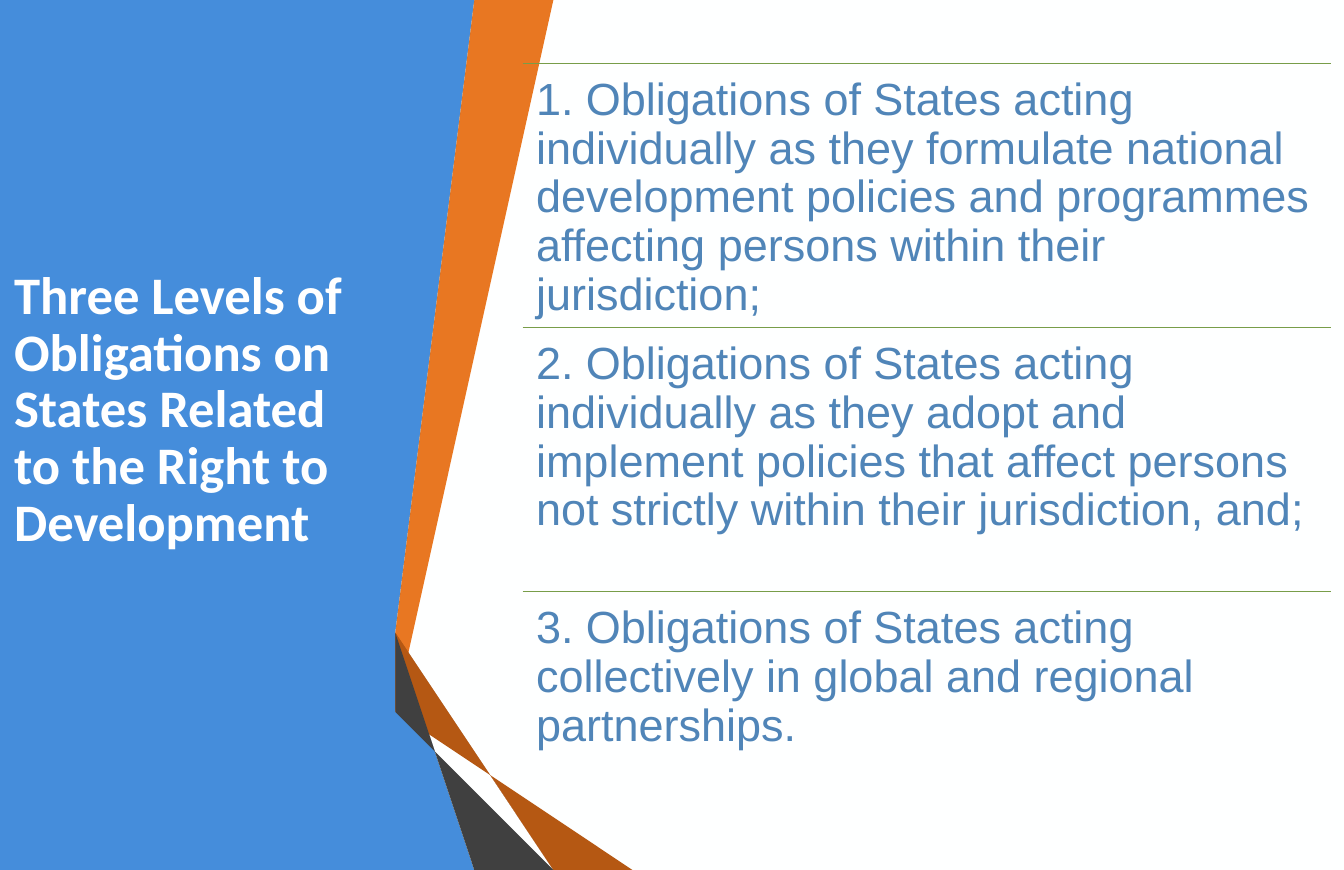
from dataclasses import dataclass

import pptx
import pptx.dml.color
import pptx.enum.shapes
import pptx.enum.text
import pptx.oxml.ns
import pptx.util
from lxml import etree
from pptx.util import Inches


@dataclass(frozen=True)
class Theme:
    background: str = "FEFFFF"
    panel: str = "458DDB"
    orange: str = "E87722"
    orange_fold: str = "B55813"
    orange_edge: str = "783B0D"
    grey: str = "595959"
    grey_fold: str = "404040"
    grey_edge: str = "262626"
    title: str = "FFFFFF"
    body: str = "5085B8"
    rule: str = "789D49"
    title_font: str = "Calibri"
    body_font: str = "Arial"
    title_size: int = 48
    body_size: int = 41
    rule_width: int = 1


THEME = Theme()

PANEL = [(4.5, 0), (5.72, 0), (4.54, 8.43), (6.14, 11), (0, 11), (0, 0)]
RIBBONS = [
    (THEME.orange, [(5.05, 8.48), (5.4, 8.55), (6.61, 0), (6.26, 0)]),
    (THEME.grey, [(6.18, 0), (5.83, 0), (4.62, 8.4), (4.97, 8.46)]),
    (THEME.grey_edge, [(4.62, 8.4), (6.26, 11), (6.34, 11)]),
    (THEME.orange_edge, [(5.05, 8.49), (7.06, 11), (7.14, 11)]),
    (THEME.orange_fold, [(5.05, 8.49), (7.14, 11), (8.02, 11), (5.4, 8.55), (5.05, 8.48)]),
    (THEME.grey_fold, [(6.99, 11), (5.03, 8.56), (4.96, 8.47), (4.97, 8.46), (4.62, 8.4), (6.34, 11)]),
]

TITLE = "Three Levels of Obligations on States Related to the Right to Development"
OBLIGATIONS = [
    "1. Obligations of States acting individually as they formulate national "
    "development policies and programmes affecting persons within their jurisdiction;",
    "2. Obligations of States acting individually as they adopt and implement "
    "policies that affect persons not strictly within their jurisdiction, and;",
    "3. Obligations of States acting collectively in global and regional partnerships.",
]
LIST_LEFT, LIST_TOP, LIST_WIDTH, ROW_HEIGHT = 6.61, 0.8, 10.22, 3.34


def rgb(value):
    return pptx.dml.color.RGBColor.from_string(value)


def add_polygon(s, points, color):
    builder = s.shapes.build_freeform(*points[0], scale=Inches(1))
    builder.add_line_segments(points[1:], close=True)
    sp = builder.convert_to_shape()
    sp.shadow.inherit = False
    sp.fill.solid()
    sp.fill.fore_color.rgb = rgb(color)
    sp.line.fill.background()


def add_rule(s, left, top, width):
    line = s.shapes.add_connector(
        pptx.enum.shapes.MSO_CONNECTOR.STRAIGHT,
        Inches(left), Inches(top), Inches(left + width), Inches(top))
    line.line.color.rgb = rgb(THEME.rule)
    line.line.width = pptx.util.Pt(THEME.rule_width)
    etree.SubElement(line._element.spPr, pptx.oxml.ns.qn("a:effectLst"))


def add_text(s, box, text, font, size, color):
    """Add a wrapped text box and return its text frame."""
    tf = s.shapes.add_textbox(*map(Inches, box)).text_frame
    tf.word_wrap = True
    p = tf.paragraphs[0]
    p.text = text
    p.line_spacing = 0.9
    p.font.name = font
    p.font.size = pptx.util.Pt(size)
    p.font.color.rgb = rgb(color)
    return tf


def add_title(s):
    tf = add_text(s, (0.08, 1.1, 4.81, 8.19), TITLE,
                  THEME.title_font, THEME.title_size, THEME.title)
    tf.vertical_anchor = pptx.enum.text.MSO_ANCHOR.MIDDLE
    tf.paragraphs[0].font.bold = True


def add_obligation(s, top, text):
    add_rule(s, LIST_LEFT, top, LIST_WIDTH)
    tf = add_text(s, (LIST_LEFT, top, LIST_WIDTH, ROW_HEIGHT), text,
                  THEME.body_font, THEME.body_size, THEME.body)
    tf.margin_left = tf.margin_right = tf.margin_top = tf.margin_bottom = Inches(0.17)


def main():
    prs = pptx.Presentation()
    prs.slide_width, prs.slide_height = Inches(17), Inches(11)
    s = prs.slides.add_slide(prs.slide_layouts[6])
    s.background.fill.solid()
    s.background.fill.fore_color.rgb = rgb(THEME.background)

    add_polygon(s, PANEL, THEME.panel)
    # The white gaps beside the ribbons are the slide showing through.
    add_polygon(s, [(5.72, 0), (6.7, 0), (5.4, 8.55), (8.02, 11), (6.14, 11), (4.54, 8.43)],
                THEME.background)
    for color, points in RIBBONS:
        add_polygon(s, points, color)

    add_title(s)
    for row, text in enumerate(OBLIGATIONS):
        add_obligation(s, LIST_TOP + row * ROW_HEIGHT, text)
    prs.save("out.pptx")


if __name__ == "__main__":
    main()
